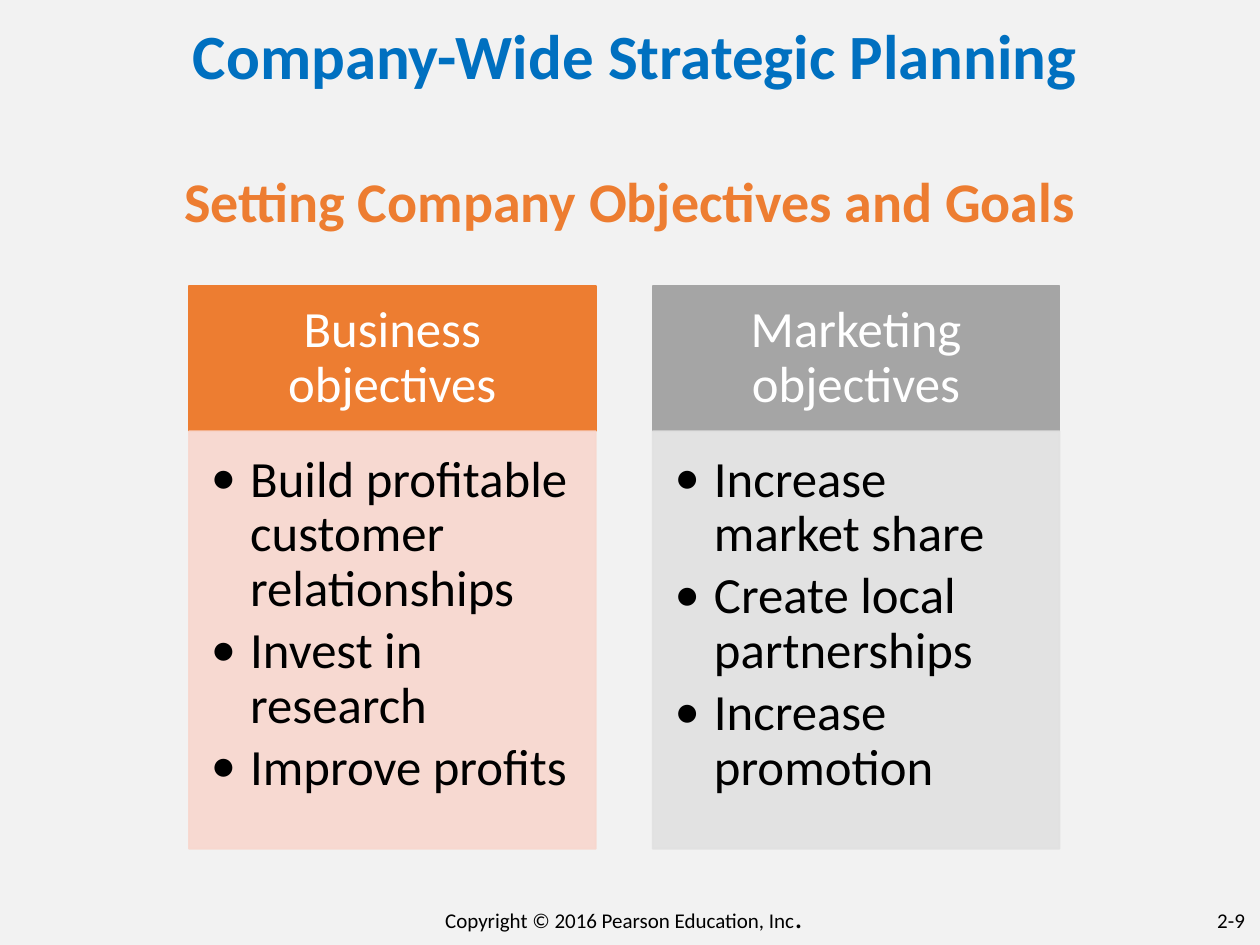
from lxml import etree
from pptx import Presentation
from pptx.dml.color import RGBColor
from pptx.enum.shapes import MSO_SHAPE
from pptx.enum.text import MSO_ANCHOR, PP_ALIGN
from pptx.oxml.ns import qn
from pptx.util import Pt

LEFT, CENTER, RIGHT = PP_ALIGN.LEFT, PP_ALIGN.CENTER, PP_ALIGN.RIGHT
TOP, MIDDLE = MSO_ANCHOR.TOP, MSO_ANCHOR.MIDDLE
RECTANGLE = MSO_SHAPE.RECTANGLE

COLORS = {
    "background": "F2F2F2", "title": "0070C0", "orange": "ED7D31",
    "pale orange": "F8D7CE", "gray": "A5A5A5", "pale gray": "E1E1E1",
    "white": "FFFFFF", "black": "000000",
}
FONT = "Calibri"

TITLE = "Company-Wide Strategic Planning"
SUBTITLE = "Setting Company Objectives and Goals"
COLUMNS = [
    ("Business objectives", "orange", "pale orange",
     ["Build profitable customer relationships", "Invest in research", "Improve profits"]),
    ("Marketing objectives", "gray", "pale gray",
     ["Increase market share", "Create local partnerships", "Increase promotion"]),
]
COPYRIGHT = [("Copyright © 2016 Pearson Education, Inc", 12), (".", 18)]
PAGE_NUMBER = "2-9"

COLUMN_LEFT, COLUMN_TOP, COLUMN_WIDTH, COLUMN_STEP = 108, 163.5, 232.5, 265
HEADER_HEIGHT, BODY_HEIGHT = 83, 238.5
BULLET_INDENT = 22.5


def rgb(name):
    return RGBColor.from_string(COLORS[name])


def add_bullet(paragraph):
    properties = paragraph._p.get_or_add_pPr()
    properties.set("marL", str(Pt(BULLET_INDENT)))
    properties.set("indent", str(-Pt(BULLET_INDENT)))
    etree.SubElement(properties, qn("a:buFont")).set("typeface", FONT)
    etree.SubElement(properties, qn("a:buChar")).set("char", "•")


def write_text(shape, paragraphs, size=12, color="black", bold=False, align=LEFT,
               anchor=TOP, margins=(7.2, 3.6, 7.2, 3.6), spacing=1.0, after=0,
               bullets=False, wrap=True):
    """Fill a shape; each paragraph is a string or a list of (text, size) runs."""
    frame = shape.text_frame
    frame.word_wrap = wrap
    frame.vertical_anchor = anchor
    (frame.margin_left, frame.margin_top,
     frame.margin_right, frame.margin_bottom) = map(Pt, margins)
    for index, content in enumerate(paragraphs):
        paragraph = frame.add_paragraph() if index else frame.paragraphs[0]
        paragraph.alignment = align
        paragraph.line_spacing = spacing
        paragraph.space_before = Pt(0)
        paragraph.space_after = Pt(after)
        if bullets:
            add_bullet(paragraph)
        runs = [(content, size)] if isinstance(content, str) else content
        for text, run_size in runs:
            run = paragraph.add_run()
            run.text = text
            font = run.font
            font.name, font.size, font.bold = FONT, Pt(run_size), bold
            font.color.rgb = rgb(color)


def add_text_box(slide, box, paragraphs, **text_format):
    write_text(slide.shapes.add_textbox(*map(Pt, box)), paragraphs, **text_format)


def add_panel(slide, box, color, opacity=100):
    panel = slide.shapes.add_shape(RECTANGLE, *map(Pt, box))
    panel.shadow.inherit = False
    panel.fill.solid()
    panel.fill.fore_color.rgb = rgb(color)
    panel.line.color.rgb = rgb(color)
    panel.line.width = Pt(1)
    if opacity < 100:
        for element in panel._element.spPr.iter(qn("a:srgbClr")):
            etree.SubElement(element, qn("a:alpha")).set("val", str(opacity * 1000))
    return panel


def add_column(slide, left, header, header_color, body_color, objectives):
    header_panel = add_panel(
        slide, (left, COLUMN_TOP, COLUMN_WIDTH, HEADER_HEIGHT), header_color)
    write_text(header_panel, [header], size=29, color="white", align=CENTER,
               anchor=MIDDLE, margins=(16.5, 9.5, 16.5, 9.5), spacing=0.9)
    body_panel = add_panel(
        slide, (left, COLUMN_TOP + HEADER_HEIGHT, COLUMN_WIDTH, BODY_HEIGHT),
        body_color, opacity=90)
    write_text(body_panel, objectives, size=29, margins=(12.5, 12.5, 15, 18),
               spacing=0.9, after=4, bullets=True)


def main():
    presentation = Presentation()
    presentation.slide_width, presentation.slide_height = Pt(720), Pt(540)
    slide = presentation.slides.add_slide(presentation.slide_layouts[5])
    slide.background.fill.solid()
    slide.background.fill.fore_color.rgb = rgb("background")

    title = slide.shapes.title
    title.left, title.top, title.width, title.height = map(Pt, (103, 6, 526, 51))
    write_text(title, [TITLE], size=36, color="title", bold=True, wrap=False)
    add_text_box(slide, (30, 96, 660, 36), [SUBTITLE], size=32, color="orange",
                 bold=True, align=CENTER, spacing=0.9)

    for index, column in enumerate(COLUMNS):
        add_column(slide, COLUMN_LEFT + index * COLUMN_STEP, *column)

    add_text_box(slide, (228, 509, 257, 29), [COPYRIGHT], align=CENTER)
    add_text_box(slide, (649.5, 515, 69, 22), [PAGE_NUMBER], align=RIGHT)
    presentation.save("out.pptx")


if __name__ == "__main__":
    main()
